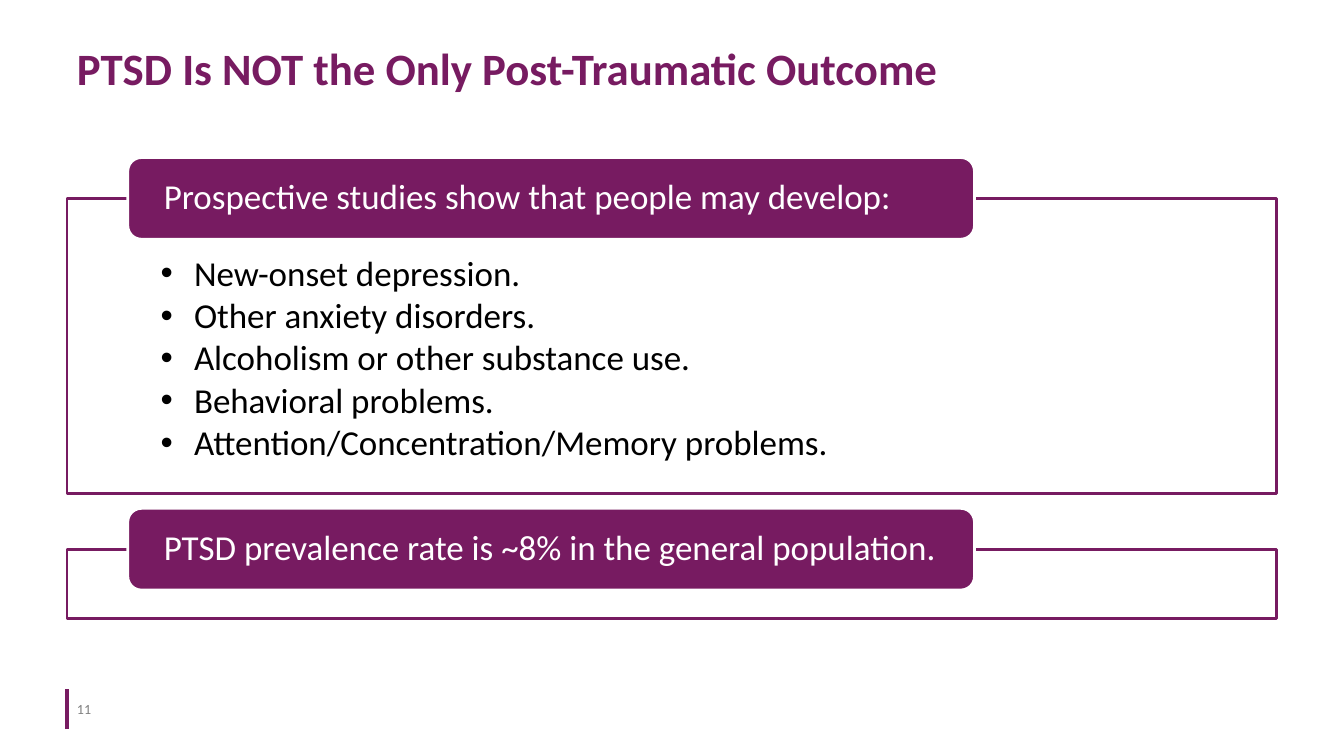
from lxml import etree
from pptx import Presentation
from pptx import util as u
from pptx.dml.color import RGBColor
from pptx.enum import shapes, text
from pptx.oxml.ns import qn

COLORS = {"plum": "771B61", "white": "FFFFFF", "black": "000000", "gray": "808080"}
LEFT, WIDTH = 1.69, 30.48
LABEL_HEIGHT = 2.06
OUTCOMES = [
    "New-onset depression.",
    "Other anxiety disorders.",
    "Alcoholism or other substance use.",
    "Behavioral problems.",
    "Attention/Concentration/Memory problems.",
]


def rgb(name):
    return RGBColor.from_string(COLORS[name])


def write(paragraph, words, size=25, color="black", bold=False, spacing=1.0, after=0):
    paragraph.text = words
    paragraph.alignment = text.PP_ALIGN.LEFT
    paragraph.line_spacing = spacing
    paragraph.space_before = u.Pt(0)
    paragraph.space_after = u.Pt(after)
    font = paragraph.font
    font.name, font.size, font.bold = "Calibri", u.Pt(size), bold
    font.color.rgb = rgb(color)


def add_bullet(paragraph, indent):
    properties = paragraph._p.get_or_add_pPr()
    properties.set("marL", str(u.Cm(indent)))
    properties.set("indent", str(-u.Cm(indent)))
    etree.SubElement(properties, qn("a:buFont")).set("typeface", "Arial")
    etree.SubElement(properties, qn("a:buChar")).set("char", "•")


class OutcomeSlide:
    def __init__(self, presentation):
        self.slide = presentation.slides.add_slide(presentation.slide_layouts[1])

    def place(self, shape, left, top, width, height):
        shape.left, shape.top = u.Cm(left), u.Cm(top)
        shape.width, shape.height = u.Cm(width), u.Cm(height)

    def paint(self, shape, fill, line):
        shape.fill.solid()
        shape.fill.fore_color.rgb = rgb(fill)
        shape.line.color.rgb = rgb(line)
        shape.line.width = u.Pt(2)

    def frame(self, shape, anchor, margins):
        """Set up wrapping, anchor and margins (left, top, right, bottom in cm)."""
        frame = shape.text_frame
        frame.word_wrap = True
        frame.auto_size = text.MSO_AUTO_SIZE.NONE
        frame.vertical_anchor = anchor
        (frame.margin_left, frame.margin_top,
         frame.margin_right, frame.margin_bottom) = map(u.Cm, margins)
        return frame

    def title(self, words):
        title = self.slide.shapes.title
        self.place(title, LEFT, 0.38, WIDTH, 2.64)
        frame = self.frame(title, text.MSO_ANCHOR.MIDDLE, (0.25, 0.13, 0.25, 0.13))
        write(frame.paragraphs[0], words, size=32, color="plum", bold=True)

    def bullet_panel(self, items, top, height):
        body = self.slide.placeholders[1]
        self.place(body, LEFT, top, WIDTH, height)
        self.paint(body, "white", "plum")
        frame = self.frame(body, text.MSO_ANCHOR.TOP, (2.36, 1.45, 2.36, 0.48))
        for index, item in enumerate(items):
            paragraph = frame.add_paragraph() if index else frame.paragraphs[0]
            add_bullet(paragraph, 0.84)
            write(paragraph, item, spacing=0.9, after=3.25)

    def add_box(self, kind, left, top, width, height, fill, line):
        box = self.slide.shapes.add_shape(
            kind, u.Cm(left), u.Cm(top), u.Cm(width), u.Cm(height))
        box.shadow.inherit = False
        self.paint(box, fill, line)
        return box

    def empty_panel(self, top, height):
        self.add_box(shapes.MSO_SHAPE.RECTANGLE, LEFT, top, WIDTH, height,
                     "white", "plum")

    def label(self, words, panel_top):
        """Add a heading centred on the top edge of a panel."""
        label = self.add_box(shapes.MSO_SHAPE.ROUNDED_RECTANGLE, 3.22,
                             panel_top - LABEL_HEIGHT / 2, 21.34, LABEL_HEIGHT,
                             "plum", "white")
        frame = self.frame(label, text.MSO_ANCHOR.MIDDLE, (0.81, 0, 0.81, 0))
        write(frame.paragraphs[0], words, color="white", spacing=0.9)

    def page_number(self, number):
        top, height = 17.35, 1.02
        rule = self.slide.shapes.add_connector(
            shapes.MSO_CONNECTOR.STRAIGHT,
            u.Cm(LEFT), u.Cm(top + height), u.Cm(LEFT), u.Cm(top))
        rule.line.color.rgb = rgb("plum")
        rule.line.width = u.Pt(2.25)
        etree.SubElement(rule._element.spPr, qn("a:effectLst"))
        box = self.slide.shapes.add_textbox(
            u.Cm(LEFT), u.Cm(top), u.Cm(1.55), u.Cm(height))
        frame = self.frame(box, text.MSO_ANCHOR.MIDDLE, (0.25, 0.13, 0.25, 0.13))
        write(frame.paragraphs[0], number, size=10, color="gray")


def main():
    presentation = Presentation()
    presentation.slide_width, presentation.slide_height = u.Cm(33.87), u.Cm(19.05)
    page = OutcomeSlide(presentation)
    outcomes_top, prevalence_top = 5, 13.84
    page.title("PTSD Is NOT the Only Post-Traumatic Outcome")
    page.bullet_panel(OUTCOMES, outcomes_top, 7.44)
    page.label("Prospective studies show that people may develop:", outcomes_top)
    page.empty_panel(prevalence_top, 1.75)
    page.label("PTSD prevalence rate is ~8% in the general population.", prevalence_top)
    page.page_number("11")
    presentation.save("out.pptx")


if __name__ == "__main__":
    main()
